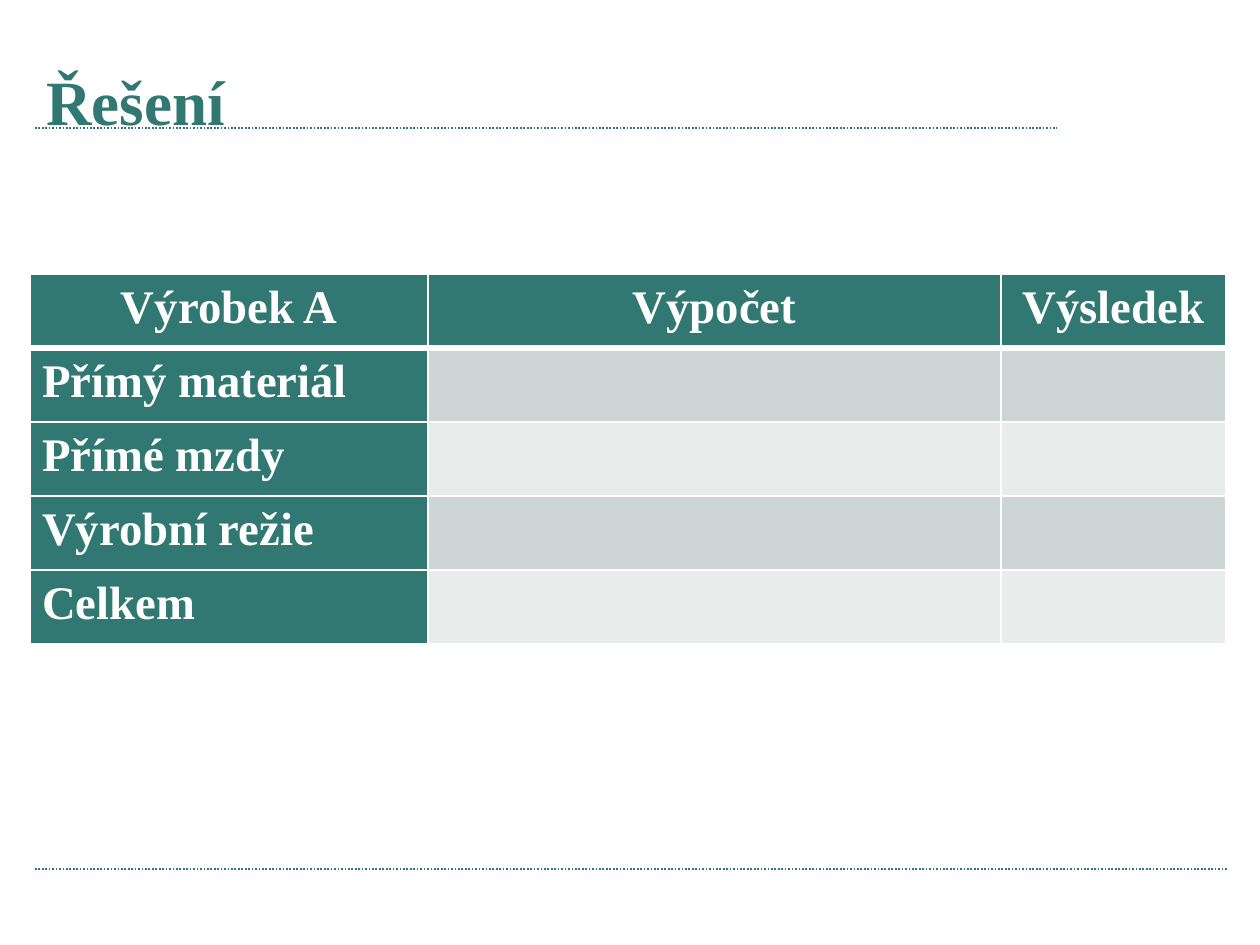
from dataclasses import dataclass

from lxml.etree import SubElement
from pptx import Presentation
from pptx.dml.color import RGBColor
from pptx.enum.dml import MSO_LINE
from pptx.enum.shapes import MSO_CONNECTOR
from pptx.enum.text import MSO_ANCHOR, PP_ALIGN
from pptx.oxml.ns import qn
from pptx.util import Emu, Pt

PX_PER_INCH = 168
FONT = "Times New Roman"
COLORS = {
    "teal": "307871",
    "white": "FFFFFF",
    "dark_band": "CDD6D5",
    "light_band": "E8ECEB",
}
HEADERS = ["Výrobek A", "Výpočet", "Výsledek"]
COST_ITEMS = ["Přímý materiál", "Přímé mzdy", "Výrobní režie", "Celkem"]
COLUMN_WIDTHS = [398, 573, 225]
ROW_HEIGHT = 74


@dataclass
class Rule:
    left: int
    right: int
    y: int


RULES = [Rule(35, 1057, 128), Rule(35, 1227, 869)]


def px(length: int) -> Emu:
    return Emu(round(length * 914400 / PX_PER_INCH))


def color(name: str) -> RGBColor:
    return RGBColor.from_string(COLORS[name])


def style_text(para, size: int, color_name: str) -> None:
    para.font.name = FONT
    para.font.size = Pt(size)
    para.font.bold = True
    para.font.color.rgb = color(color_name)


def add_rule(page, rule: Rule) -> None:
    line = page.shapes.add_connector(
        MSO_CONNECTOR.STRAIGHT, px(rule.left), px(rule.y), px(rule.right), px(rule.y))
    line.line.color.rgb = color("teal")
    line.line.width = Pt(0.75)
    line.line.dash_style = MSO_LINE.ROUND_DOT
    SubElement(line._element.spPr, qn("a:effectLst"))


def add_title(page, text: str) -> None:
    box = page.shapes.add_textbox(px(30), px(49), px(1110), px(99))
    frame = box.text_frame
    frame.word_wrap = True
    frame.vertical_anchor = MSO_ANCHOR.BOTTOM
    frame.margin_bottom = px(10)
    para = frame.paragraphs[0]
    para.text = text
    style_text(para, 27, "teal")


def set_borders(cell, top: int, bottom: int) -> None:
    properties = cell._tc.get_or_add_tcPr()
    for side, width in (("L", 1), ("R", 1), ("T", top), ("B", bottom)):
        border = SubElement(properties, qn(f"a:ln{side}"), w=str(Pt(width)))
        fill = SubElement(border, qn("a:solidFill"))
        SubElement(fill, qn("a:srgbClr"), val=COLORS["white"])


def fill_cell(cell, row: int, column: int, text: str) -> None:
    set_borders(cell, top=3 if row == 1 else 1, bottom=3 if row == 0 else 1)
    band = "dark_band" if row % 2 else "light_band"
    cell.fill.solid()
    cell.fill.fore_color.rgb = color("teal" if row == 0 or column == 0 else band)
    if text:
        cell.margin_left = cell.margin_right = px(12)
        cell.margin_top = cell.margin_bottom = 0
        para = cell.text_frame.paragraphs[0]
        para.text = text
        para.alignment = PP_ALIGN.CENTER if row == 0 else PP_ALIGN.LEFT
        para.line_spacing = 1.15
        style_text(para, 20, "white")


def add_cost_table(page) -> None:
    rows = [HEADERS] + [[item, "", ""] for item in COST_ITEMS]
    table = page.shapes.add_table(
        len(rows), len(HEADERS), px(30), px(274),
        px(sum(COLUMN_WIDTHS)), px(ROW_HEIGHT * len(rows))).table
    for column, width in zip(table.columns, COLUMN_WIDTHS):
        column.width = px(width)
    for row_index, texts in enumerate(rows):
        table.rows[row_index].height = px(ROW_HEIGHT)
        for column_index, text in enumerate(texts):
            fill_cell(table.cell(row_index, column_index), row_index, column_index, text)


def main() -> None:
    deck = Presentation()
    deck.slide_width, deck.slide_height = px(1260), px(945)
    page = deck.slides.add_slide(deck.slide_layouts[6])

    # Dotted rules under the title and above the footer
    for rule in RULES:
        add_rule(page, rule)

    # Title and table
    add_title(page, "Řešení")
    add_cost_table(page)

    deck.save("out.pptx")


if __name__ == "__main__":
    main()
